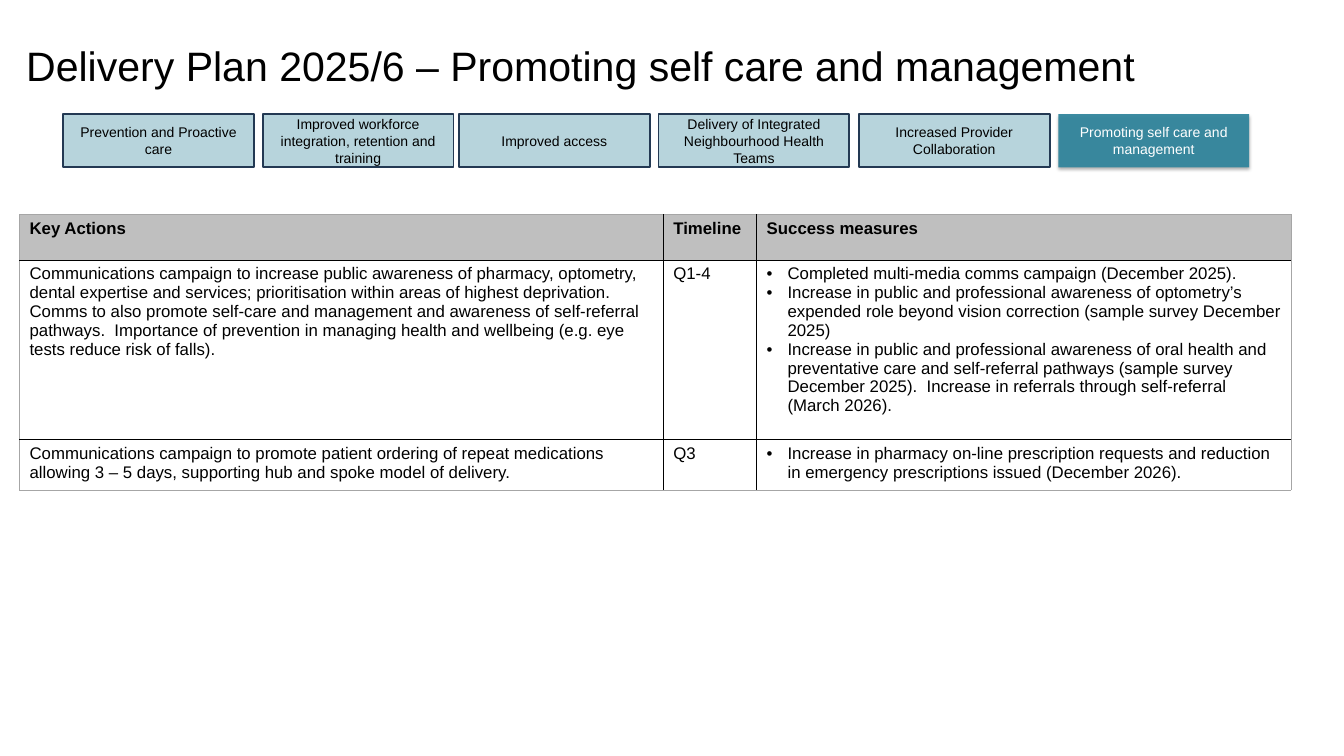
import pptx
import pptx.util
import pptx.dml.color
import pptx.enum.shapes
import pptx.enum.text
import pptx.oxml
import pptx.oxml.ns
import lxml.etree

Inches = pptx.util.Inches
Pt = pptx.util.Pt
RGBColor = pptx.dml.color.RGBColor
qn = pptx.oxml.ns.qn
SubElement = lxml.etree.SubElement

BLACK = RGBColor(0x00, 0x00, 0x00)
WHITE = RGBColor(0xFF, 0xFF, 0xFF)
TEAL = RGBColor(0x31, 0x85, 0x9C)
NAVY = RGBColor(0x23, 0x39, 0x53)
HEADER_GREY = RGBColor(0xBF, 0xBF, 0xBF)
EDGE_GREY = RGBColor(0xA6, 0xA6, 0xA6)


def add_run(paragraph, text, size, color=BLACK, bold=False):
    run = paragraph.add_run()
    run.text = text
    run.font.name = "Arial"
    run.font.size = Pt(size)
    run.font.bold = bold
    run.font.color.rgb = color


def add_border(cell, side, color, width):
    line = SubElement(cell._tc.get_or_add_tcPr(), qn("a:" + side), w=str(Pt(width)))
    fill = SubElement(line, qn("a:solidFill"))
    SubElement(fill, qn("a:srgbClr"), val=str(color))


presentation = pptx.Presentation()
presentation.slide_width = Inches(20)
presentation.slide_height = Inches(11.25)
slide = presentation.slides.add_slide(presentation.slide_layouts[6])

# Title
title = slide.shapes.add_textbox(Inches(0.29), Inches(-0.12), Inches(17.25), Inches(2.17))
title.text_frame.word_wrap = True
title.text_frame.vertical_anchor = pptx.enum.text.MSO_ANCHOR.MIDDLE
add_run(title.text_frame.paragraphs[0], "Delivery Plan 2025/6 – Promoting self care and management", 44)

# Theme boxes, the current theme highlighted
themes = [
    (0.94, "Prevention and Proactive care"),
    (3.91, "Improved workforce integration, retention and training"),
    (6.83, "Improved access"),
    (9.8, "Delivery of Integrated Neighbourhood Health Teams"),
    (12.78, "Increased Provider Collaboration"),
    (15.75, "Promoting self care and management"),
]
current_theme = themes[-1][1]
for left, theme in themes:
    is_current = theme == current_theme
    shape = slide.shapes.add_shape(
        pptx.enum.shapes.MSO_SHAPE.RECTANGLE, Inches(left), Inches(1.7), Inches(2.84), Inches(0.79))
    shape.shadow.inherit = False
    shape.fill.solid()
    shape.fill.fore_color.rgb = TEAL
    fill_color = shape._element.spPr.find(".//" + qn("a:srgbClr"))
    SubElement(fill_color, qn("a:alpha"), val="94000" if is_current else "35000")
    if is_current:
        shape.line.fill.background()
        effects = shape._element.spPr.find(qn("a:effectLst"))
        shadow = SubElement(effects, qn("a:outerShdw"), blurRad=str(Pt(3.5)),
                            dist=str(Pt(2.2)), dir="5400000", rotWithShape="0")
        shadow_color = SubElement(shadow, qn("a:srgbClr"), val=str(BLACK))
        SubElement(shadow_color, qn("a:alpha"), val="32000")
    else:
        shape.line.color.rgb = NAVY
        shape.line.width = Pt(2)
    shape.text_frame.word_wrap = True
    shape.text_frame.vertical_anchor = pptx.enum.text.MSO_ANCHOR.MIDDLE
    paragraph = shape.text_frame.paragraphs[0]
    paragraph.alignment = pptx.enum.text.PP_ALIGN.CENTER
    add_run(paragraph, theme, 15, WHITE if is_current else BLACK)

# Action table: each cell is a list of paragraphs
rows = [
    [["Key Actions"], ["Timeline"], ["Success measures"]],
    [
        ["Communications campaign to increase public awareness of pharmacy, optometry, dental "
         "expertise and services; prioritisation within areas of highest deprivation.  Comms to "
         "also promote self-care and management and awareness of self-referral pathways.  "
         "Importance of prevention in managing health and wellbeing (e.g. eye tests reduce risk "
         "of falls)."],
        ["Q1-4"],
        ["Completed multi-media comms campaign (December 2025).",
         "Increase in public and professional awareness of optometry’s expended role beyond "
         "vision correction (sample survey December 2025)",
         "Increase in public and professional awareness of oral health and preventative care and "
         "self-referral pathways (sample survey December 2025).  Increase in referrals through "
         "self-referral (March 2026)."],
    ],
    [
        ["Communications campaign to promote patient ordering of repeat medications allowing "
         "3 – 5 days, supporting hub and spoke model of delivery."],
        ["Q3"],
        ["Increase in pharmacy on-line prescription requests and reduction in emergency "
         "prescriptions issued (December 2026)."],
    ],
]
column_widths = [9.58, 1.39, 7.95]
row_heights = [0.68, 2.67, 0.75]
table = slide.shapes.add_table(
    len(rows), len(column_widths), Inches(0.29), Inches(3.19),
    Inches(sum(column_widths)), Inches(sum(row_heights))).table
table.horz_banding = False
for column, width in zip(table.columns, column_widths):
    column.width = Inches(width)
for row, height in zip(table.rows, row_heights):
    row.height = Inches(height)

last_row = len(rows) - 1
last_column = len(column_widths) - 1
for row_index, row in enumerate(rows):
    for column_index, texts in enumerate(row):
        cell = table.cell(row_index, column_index)
        is_header = row_index == 0
        cell.margin_left = cell.margin_right = Inches(0.15)
        cell.margin_top = cell.margin_bottom = Inches(0.07)

        # Black inner rules, thin grey outer edge
        outer_sides = {
            "lnL": column_index == 0,
            "lnR": column_index == last_column,
            "lnT": row_index == 0,
            "lnB": row_index == last_row,
        }
        for side, is_outer in outer_sides.items():
            add_border(cell, side, EDGE_GREY if is_outer else BLACK, 0.5 if is_outer else 1)
        if is_header:
            cell.fill.solid()
            cell.fill.fore_color.rgb = HEADER_GREY
        else:
            cell.fill.background()

        # Text, with bullets for the success measures
        for text_index, text in enumerate(texts):
            frame = cell.text_frame
            paragraph = frame.paragraphs[0] if text_index == 0 else frame.add_paragraph()
            if column_index == last_column and not is_header:
                properties = paragraph._p.get_or_add_pPr()
                properties.set("marL", str(Inches(0.31)))
                properties.set("indent", str(Inches(-0.31)))
                SubElement(properties, qn("a:buFont"), typeface="Arial")
                SubElement(properties, qn("a:buChar"), char="•")
            add_run(paragraph, text, 18, bold=is_header)

presentation.save("out.pptx")
